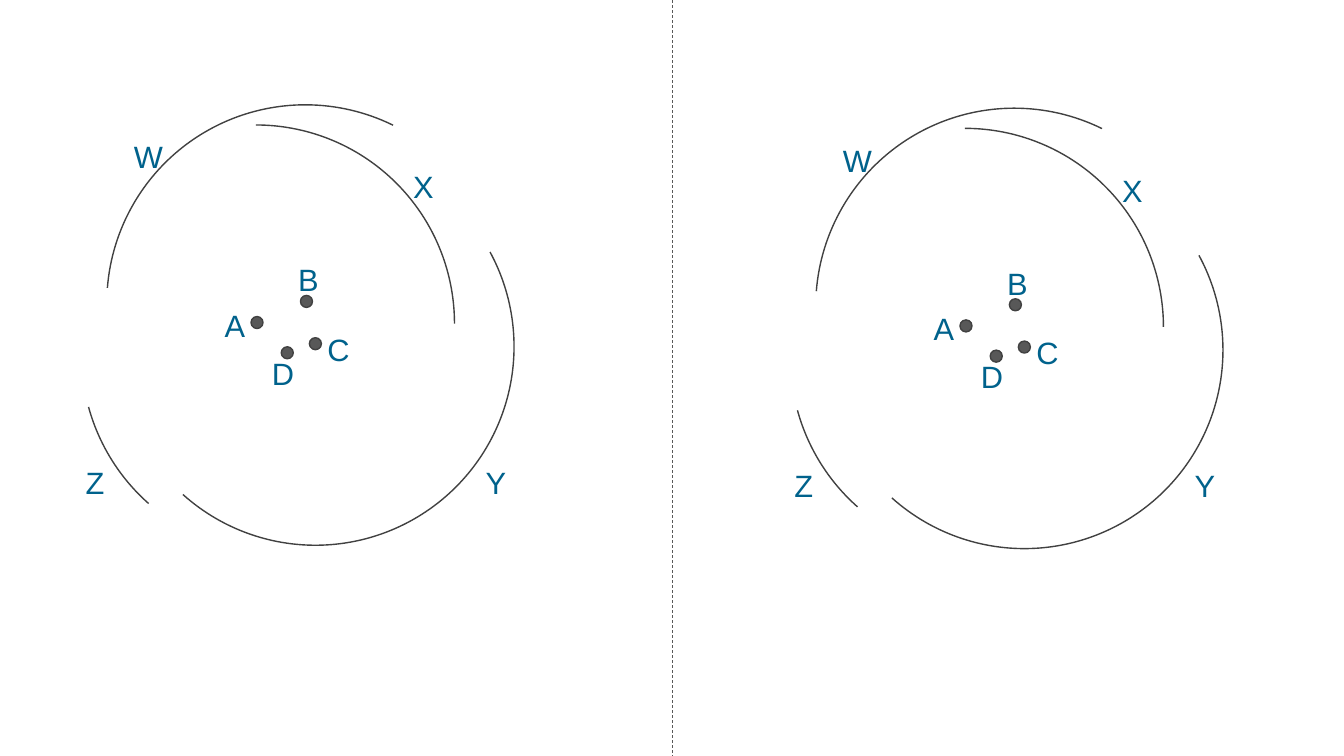
import pptx
import pptx.dml.color
import pptx.enum.dml
import pptx.enum.shapes
import pptx.enum.text
import pptx.oxml
import pptx.util

Pt = pptx.util.Pt
Shape = pptx.enum.shapes.MSO_SHAPE

COLOURS = {"label": "00628C", "dot": "585858", "outline": "414141", "divider": "585858"}
SLIDE_WIDTH, SLIDE_HEIGHT = 960, 540
DOT_SIZE = 8.6
ARC_SIZE = 283.7
PANEL_OFFSETS = [(0, 0), (506.4, 2.4)]

DOTS = [(214.6, 211), (200.9, 247.7), (179.3, 226.1), (221, 241.2)]
ARCS = [
    (41, 89.3, 270, 0),
    (76.3, 74.9, 184.49, 296.21),
    (83.5, 105.8, 331.54, 131.86),
    (58.3, 111.6, 131.48, 164.77),
]
LABELS = [
    ("A", 153.4, 215.3, 29.5),
    ("B", 205.9, 182.9, 29.5),
    ("C", 226.8, 232.6, 30.2),
    ("D", 187.2, 249.8, 30.2),
    ("W", 88.6, 95, 35.3),
    ("X", 288, 116.6, 29.5),
    ("Y", 339.8, 327.6, 29.5),
    ("Z", 54, 327.6, 28.1),
]


def colour(name):
    return pptx.dml.color.RGBColor.from_string(COLOURS[name])


def add_outlined(page, kind, left, top, size):
    shape = page.shapes.add_shape(kind, Pt(left), Pt(top), Pt(size), Pt(size))
    shape.shadow.inherit = False
    shape.line.color.rgb = colour("outline")
    shape.line.width = Pt(1)
    return shape


def add_dot(page, left, top):
    dot = add_outlined(page, Shape.OVAL, left, top, DOT_SIZE)
    dot.fill.solid()
    dot.fill.fore_color.rgb = colour("dot")


def add_arc(page, left, top, start, end):
    """Draw an arc clockwise between two angles in degrees."""
    arc = add_outlined(page, Shape.ARC, left, top, ARC_SIZE)
    arc.fill.background()
    for index, angle in enumerate((start, end)):
        arc.adjustments[index] = angle * 0.6


def add_text(page, text, left, top, width, height=33.8, size=22, font="Arial", tint="label"):
    box = page.shapes.add_textbox(Pt(left), Pt(top), Pt(width), Pt(height))
    frame = box.text_frame
    frame.word_wrap = False
    frame.auto_size = pptx.enum.text.MSO_AUTO_SIZE.SHAPE_TO_FIT_TEXT
    span = frame.paragraphs[0].add_run()
    span.text = text
    span.font.size = Pt(size)
    span.font.name = font
    span.font.color.rgb = colour(tint)


def add_divider(page):
    middle = Pt(SLIDE_WIDTH / 2)
    divider = page.shapes.add_connector(
        pptx.enum.shapes.MSO_CONNECTOR.STRAIGHT, middle, Pt(0), middle, Pt(SLIDE_HEIGHT)
    )
    divider.line.color.rgb = colour("divider")
    divider.line.width = Pt(0.5)
    divider.line.dash_style = pptx.enum.dml.MSO_LINE.DASH
    properties = divider._element.spPr
    properties.append(pptx.oxml.parse_xml(
        '<a:effectLst xmlns:a="http://schemas.openxmlformats.org/drawingml/2006/main"/>'
    ))


def add_panel(page, across, down):
    for left, top in DOTS:
        add_dot(page, left + across, top + down)
    for left, top, start, end in ARCS:
        add_arc(page, left + across, top + down, start, end)
    for text, left, top, width in LABELS:
        add_text(page, text, left + across, top + down, width)


def main():
    deck = pptx.Presentation()
    deck.slide_width = Pt(SLIDE_WIDTH)
    deck.slide_height = Pt(SLIDE_HEIGHT)
    page = deck.slides.add_slide(deck.slide_layouts[6])
    for across, down in PANEL_OFFSETS:
        add_panel(page, across, down)
    add_divider(page)
    deck.save("out.pptx")


if __name__ == "__main__":
    main()
